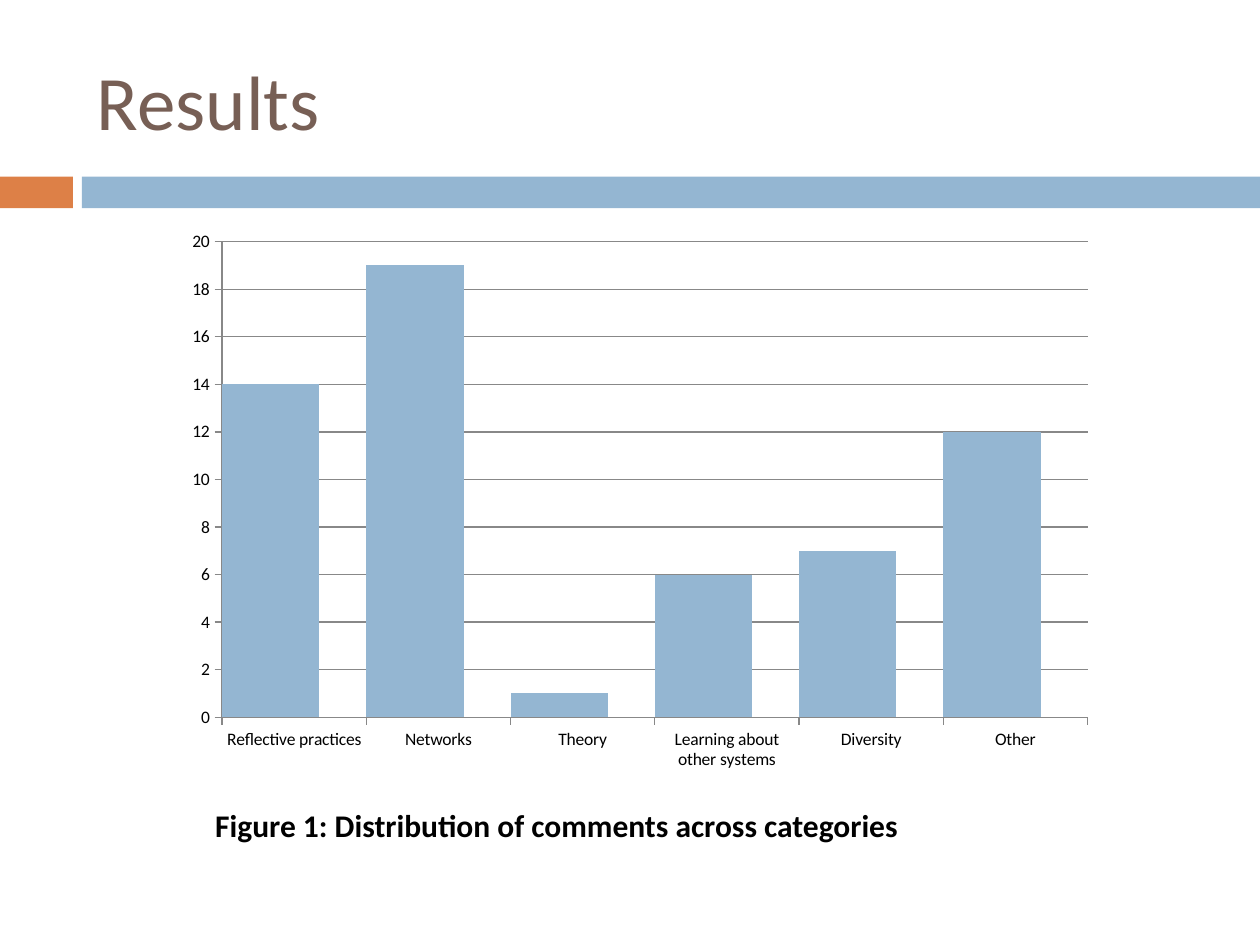
from pptx import Presentation
from pptx.chart.data import CategoryChartData
from pptx.dml.color import RGBColor
from pptx.enum.chart import XL_CHART_TYPE, XL_TICK_MARK
from pptx.enum.shapes import MSO_SHAPE
from pptx.enum.text import MSO_ANCHOR, PP_ALIGN
from pptx.util import Cm, Pt

COLUMNS = XL_CHART_TYPE.COLUMN_CLUSTERED
OUTSIDE = XL_TICK_MARK.OUTSIDE
RECTANGLE = MSO_SHAPE.RECTANGLE
MIDDLE = MSO_ANCHOR.MIDDLE
LEFT = PP_ALIGN.LEFT

FONT = "Calibri"
BROWN, ORANGE, BLUE, GREEN = "775F55", "DD8047", "94B6D2", "A5AB81"
BLACK, GREY = "000000", "888888"

HEADING = "Results"
CAPTION = "Figure 1: Distribution of comments across categories"
COMMENTS = {
    "Reflective practices": 14,
    "Networks": 19,
    "Theory": 1,
    "Learning about other systems": 6,
    "Diversity": 7,
    "Other": 12,
}
# The second and third series hold no values but keep their place in each group
SERIES = [
    ("Series 1", list(COMMENTS.values()), BLUE),
    ("Series 2", [None] * len(COMMENTS), ORANGE),
    ("Series 3", [None] * len(COMMENTS), GREEN),
]

SLIDE_WIDTH, SLIDE_HEIGHT = 25.4, 19.05
BAND_TOP, BAND_HEIGHT = 3.56, 0.64
BANDS = [(0, 1.47, ORANGE), (1.65, SLIDE_WIDTH - 1.65, BLUE)]


def rgb(color):
    return RGBColor.from_string(color)


def style_font(font, size, color, bold=False):
    font.name = FONT
    font.size = Pt(size)
    font.color.rgb = rgb(color)
    font.bold = bold


def write_line(frame, text, size, color, bold=False):
    paragraph = frame.paragraphs[0]
    paragraph.alignment = LEFT
    run = paragraph.add_run()
    run.text = text
    style_font(run.font, size, color, bold)


def add_band(slide, left, width, color):
    band = slide.shapes.add_shape(
        RECTANGLE, Cm(left), Cm(BAND_TOP), Cm(width), Cm(BAND_HEIGHT))
    band.shadow.inherit = False
    band.fill.solid()
    band.fill.fore_color.rgb = rgb(color)
    band.line.fill.background()


def add_comment_chart(slide):
    data = CategoryChartData()
    data.categories = list(COMMENTS)
    for name, values, _ in SERIES:
        data.add_series(name, values)
    chart = slide.shapes.add_chart(
        COLUMNS, Cm(3.5), Cm(4.45), Cm(18.8), Cm(11.28), data).chart
    chart.has_legend = False
    chart.has_title = False
    style_font(chart.font, 10, BLACK)

    plot = chart.plots[0]
    plot.vary_by_categories = False
    plot.gap_width = 0
    plot.overlap = 76
    for series, (_, _, color) in zip(plot.series, SERIES):
        series.format.fill.solid()
        series.format.fill.fore_color.rgb = rgb(color)

    counts = chart.value_axis
    counts.minimum_scale, counts.maximum_scale, counts.major_unit = 0, 20, 2
    counts.has_major_gridlines = True
    for axis in (chart.category_axis, counts):
        axis.major_tick_mark = OUTSIDE
    for part in (chart.category_axis, counts, counts.major_gridlines):
        part.format.line.color.rgb = rgb(GREY)
        part.format.line.width = Pt(0.75)


prs = Presentation()
prs.slide_width, prs.slide_height = Cm(SLIDE_WIDTH), Cm(SLIDE_HEIGHT)
slide = prs.slides.add_slide(prs.slide_layouts[5])

for left, width, color in BANDS:
    add_band(slide, left, width, color)

title = slide.shapes.title
title.left, title.top, title.width, title.height = Cm(1.7), Cm(0.64), Cm(22.66), Cm(2.74)
title.text_frame.vertical_anchor = MIDDLE
write_line(title.text_frame, HEADING, 44, BROWN)

add_comment_chart(slide)

caption = slide.shapes.add_textbox(Cm(4.09), Cm(16.13), Cm(18.8), Cm(1.02))
caption.text_frame.word_wrap = True
write_line(caption.text_frame, CAPTION, 18, BLACK, bold=True)

prs.save("out.pptx")
